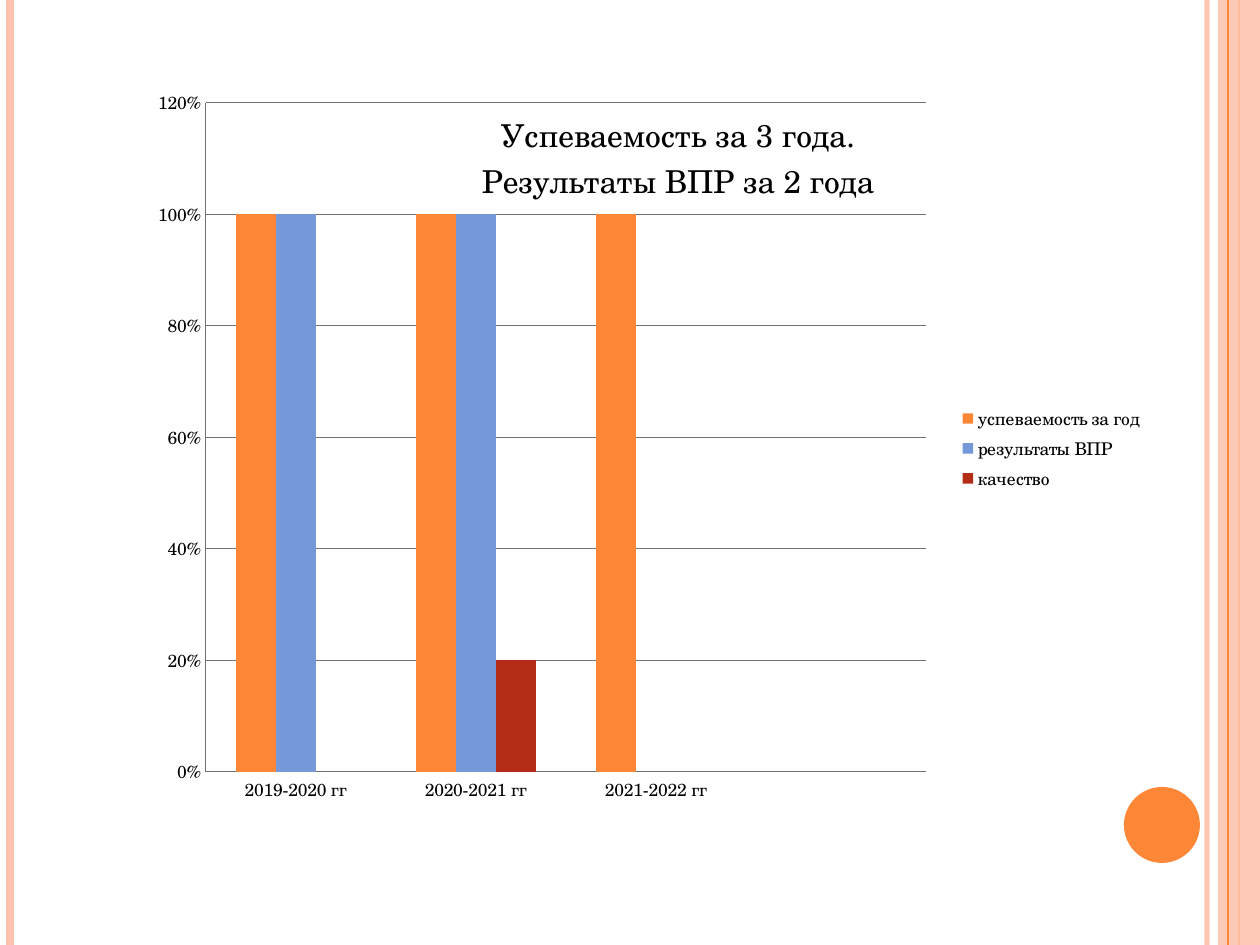
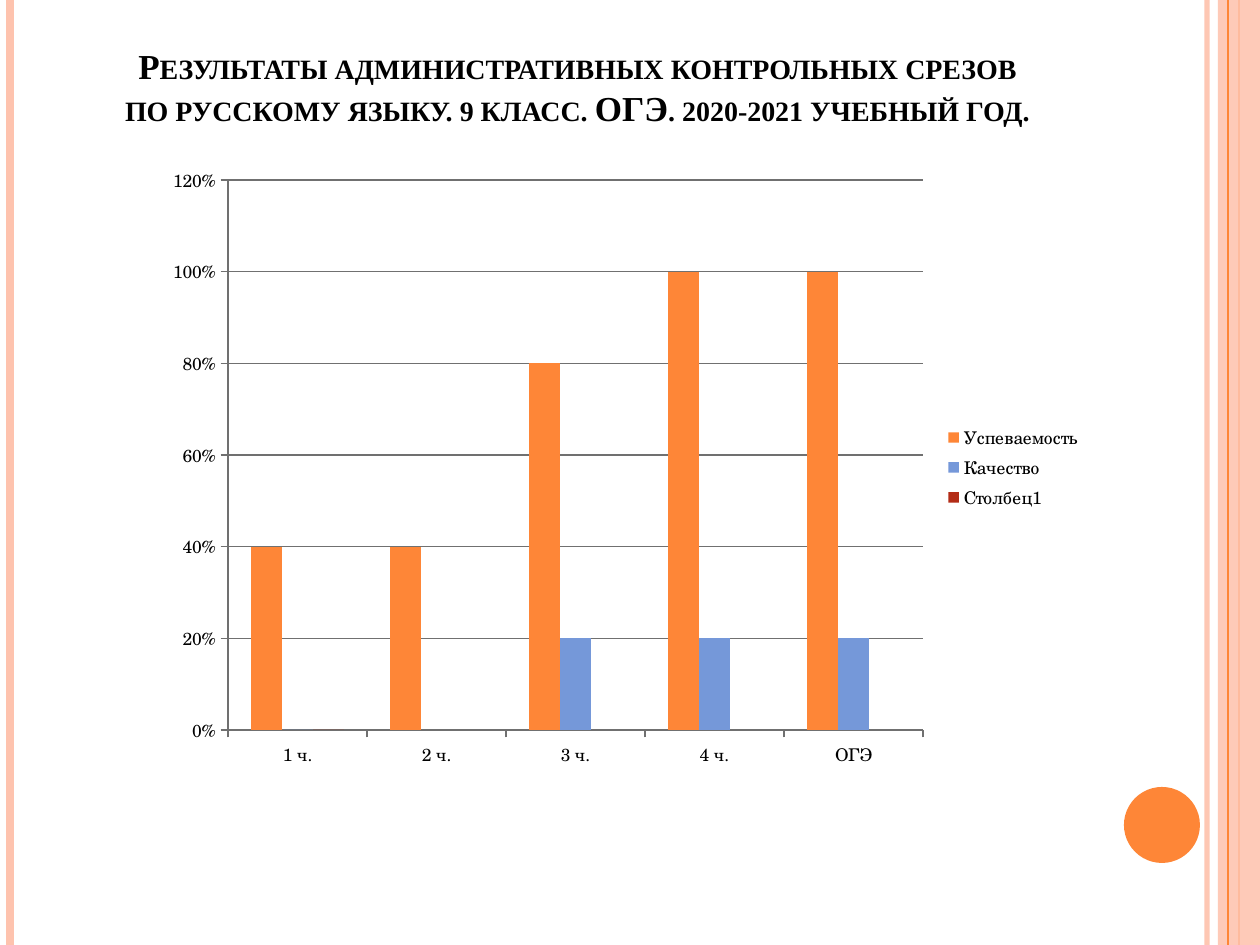
"""Build two slides of school results with column charts."""
import dataclasses

import lxml.etree
import pptx
import pptx.chart.data
import pptx.dml.color
import pptx.enum.chart
import pptx.enum.shapes
import pptx.enum.text
import pptx.oxml.ns
import pptx.util

EMU_PER_PX = 914400 / 126
SLIDE_WIDTH, SLIDE_HEIGHT = 1260, 945
TITLE_ONLY, BLANK = 5, 6


@dataclasses.dataclass(frozen=True)
class Theme:
    """Colours, fonts and type sizes of the presentation."""

    accent: str = "FE8637"
    band: str = "FEC3AE"
    text: str = "000000"
    grid: str = "707070"
    series: tuple = ("FE8637", "7598D9", "B32C16")
    chart_font: str = "TeX Gyre Schola"
    title_font: str = "Times New Roman"
    label_size: int = 10
    chart_title_size: int = 18
    title_size: int = 20


THEME = Theme()


def px(length):
    """Turn pixels into EMU."""
    return pptx.util.Emu(round(length * EMU_PER_PX))


def box(*lengths):
    """Turn left, top, width and height into EMU."""
    return [px(length) for length in lengths]


def rgb(color):
    """Turn a hex string into a colour."""
    return pptx.dml.color.RGBColor.from_string(color)


def add_child(parent, tag, **attributes):
    """Append an XML child with attributes."""
    return lxml.etree.SubElement(parent, pptx.oxml.ns.qn(tag), **attributes)


def set_opacity(shape, percent):
    """Make the colour of a shape or line partly transparent."""
    for color in shape.element.spPr.xpath(".//a:srgbClr"):
        add_child(color, "a:alpha", val=str(percent * 1000))


def style_font(font, name, size, bold=False):
    """Set the face, size, weight and text colour of a font."""
    font.name = name
    font.size = pptx.util.Pt(size)
    font.bold = bold
    font.color.rgb = rgb(THEME.text)


def add_stripe(slide, x, color, width, opacity=100):
    """Draw a line down the full height of the slide."""
    stripe = slide.shapes.add_connector(
        pptx.enum.shapes.MSO_CONNECTOR.STRAIGHT,
        px(x), 0, px(x), px(SLIDE_HEIGHT))
    stripe.line.color.rgb = rgb(color)
    stripe.line.width = pptx.util.Pt(width)
    add_child(stripe.element.spPr, "a:effectLst")
    if opacity < 100:
        set_opacity(stripe, opacity)
    return stripe


def add_filled_shape(slide, kind, place, color, opacity=100):
    """Draw a preset shape without an outline."""
    shape = slide.shapes.add_shape(kind, *box(*place))
    shape.shadow.inherit = False
    shape.fill.solid()
    shape.fill.fore_color.rgb = rgb(color)
    shape.line.fill.background()
    if opacity < 100:
        set_opacity(shape, opacity)
    return shape


def decorate_master(presentation, slide):
    """Draw the bands and the circle, then move them to the master."""
    kinds = pptx.enum.shapes.MSO_SHAPE
    decorations = [
        add_stripe(slide, 1207, THEME.band, 3, 93),
        add_stripe(slide, 10, THEME.band, 4.5),
        add_stripe(slide, 1239, THEME.accent, 1.5),
        add_filled_shape(slide, kinds.RECTANGLE,
                         (1218, 0, 42, SLIDE_HEIGHT), THEME.band, 87),
        add_stripe(slide, 1228, THEME.accent, 0.75),
        add_filled_shape(slide, kinds.OVAL, (1124, 787, 76, 76), THEME.accent),
    ]
    for decoration in decorations:
        presentation.slide_master.shapes.element.append(decoration.element)


def set_title(slide, place, lines):
    """Place the title and fill it line by line in small capitals."""
    title = slide.shapes.title
    title.left, title.top, title.width, title.height = box(*place)
    frame = title.text_frame
    frame.word_wrap = True
    frame.auto_size = pptx.enum.text.MSO_AUTO_SIZE.NONE
    frame.vertical_anchor = pptx.enum.text.MSO_ANCHOR.BOTTOM
    paragraph = frame.paragraphs[0]
    paragraph.alignment = pptx.enum.text.PP_ALIGN.CENTER
    for index, line in enumerate(lines):
        if index:
            paragraph.add_line_break()
        run = paragraph.add_run()
        run.text = line
        style_font(run.font, THEME.title_font, THEME.title_size, bold=True)
        run.font.element.set("cap", "small") if hasattr(
            run.font, "element") else run._r.get_or_add_rPr().set("cap", "small")


def set_manual_layout(element, index, **fractions):
    """Fix the place of a chart part as fractions of the chart."""
    layout = element.find(pptx.oxml.ns.qn("c:layout"))
    if layout is None:
        layout = lxml.etree.Element(pptx.oxml.ns.qn("c:layout"))
        element.insert(index, layout)
    manual = add_child(layout, "c:manualLayout")
    if "w" in fractions:
        add_child(manual, "c:layoutTarget", val="inner")
    for axis in "xy":
        add_child(manual, f"c:{axis}Mode", val="edge")
    for name, value in fractions.items():
        add_child(manual, f"c:{name}", val=str(value))


def style_axes(chart, tick):
    """Format the axes, the gridlines and the percent scale."""
    values = chart.value_axis
    values.minimum_scale, values.maximum_scale = 0, 1.2
    values.major_unit = 0.2
    values.has_major_gridlines = True
    values.tick_labels.number_format = "0%"
    values.tick_labels.number_format_is_linked = False
    for axis in (values, chart.category_axis):
        axis.major_tick_mark = tick
        axis.minor_tick_mark = pptx.enum.chart.XL_TICK_MARK.NONE
    for line in (values.format.line, chart.category_axis.format.line,
                 values.major_gridlines.format.line):
        line.color.rgb = rgb(THEME.grid)
        line.width = pptx.util.Pt(0.75)


def add_column_chart(slide, place, categories, series, plot_area, tick):
    """Add a clustered column chart with a legend at the right."""
    data = pptx.chart.data.CategoryChartData(number_format="0%")
    data.categories = categories
    for name, values in series.items():
        data.add_series(name, values)
    chart = slide.shapes.add_chart(
        pptx.enum.chart.XL_CHART_TYPE.COLUMN_CLUSTERED,
        *box(*place), data).chart
    style_font(chart.font, THEME.chart_font, THEME.label_size)
    chart.has_title = False
    chart.has_legend = True
    chart.legend.position = pptx.enum.chart.XL_LEGEND_POSITION.RIGHT
    chart.legend.include_in_layout = False
    style_axes(chart, tick)
    plot = chart.plots[0]
    plot.gap_width, plot.overlap = 150, 0
    plot.vary_by_categories = False
    for column, color in zip(plot.series, THEME.series):
        column.format.fill.solid()
        column.format.fill.fore_color.rgb = rgb(color)
    set_manual_layout(chart.element.xpath("c:chart/c:plotArea")[0], 0,
                      **dict(zip("xywh", plot_area)))
    return chart


def add_chart_title(chart, lines, x, y):
    """Lay a title of several paragraphs over the plot."""
    chart.has_title = True
    title = chart.chart_title
    frame = title.text_frame
    for index, line in enumerate(lines):
        paragraph = frame.add_paragraph() if index else frame.paragraphs[0]
        run = paragraph.add_run()
        run.text = line
        style_font(run.font, THEME.chart_font, THEME.chart_title_size)
    element = chart.element.xpath("c:chart/c:title")[0]
    set_manual_layout(element, 1, x=x, y=y)
    for overlay in element.xpath("c:overlay"):
        overlay.set("val", "1")


def build_yearly_slide(slide):
    """Show the results by school year."""
    chart = add_column_chart(
        slide, (144, 76, 1012, 745),
        ["2019-2020 гг", "2020-2021 гг", "2021-2022 гг", ""],
        {"успеваемость за год": (1, 1, 1, None),
         "результаты ВПР": (1, 1, None, None),
         "качество": (None, 0.2, None, None)},
        (0.061, 0.036, 0.712, 0.898),
        pptx.enum.chart.XL_TICK_MARK.NONE)
    add_chart_title(
        chart, ["Успеваемость за 3 года.", "Результаты ВПР за 2 года"],
        0.33, 0.04)


def build_quarterly_slide(slide):
    """Show the test results by quarter and at the final exam."""
    set_title(slide, (63, 38, 1029, 97),
              ["Результаты административных контрольных срезов",
               "по русскому языку. 9 класс. ОГЭ. 2020-2021 учебный год."])
    add_column_chart(
        slide, (154, 155, 939, 625),
        ["1 ч.", "2 ч.", "3 ч.", "4 ч.", "ОГЭ"],
        {"Успеваемость": (0.4, 0.4, 0.8, 1, 1),
         "Качество": (0, None, 0.2, 0.2, 0.2),
         "Столбец1": (0, None, None, None, None)},
        (0.079, 0.04, 0.74, 0.88),
        pptx.enum.chart.XL_TICK_MARK.OUTSIDE)


def main():
    """Build and save the presentation."""
    presentation = pptx.Presentation()
    presentation.slide_width = px(SLIDE_WIDTH)
    presentation.slide_height = px(SLIDE_HEIGHT)
    layouts = presentation.slide_layouts
    yearly = presentation.slides.add_slide(layouts[BLANK])
    quarterly = presentation.slides.add_slide(layouts[TITLE_ONLY])
    decorate_master(presentation, yearly)
    build_yearly_slide(yearly)
    build_quarterly_slide(quarterly)
    presentation.save("out.pptx")


if __name__ == "__main__":
    main()
